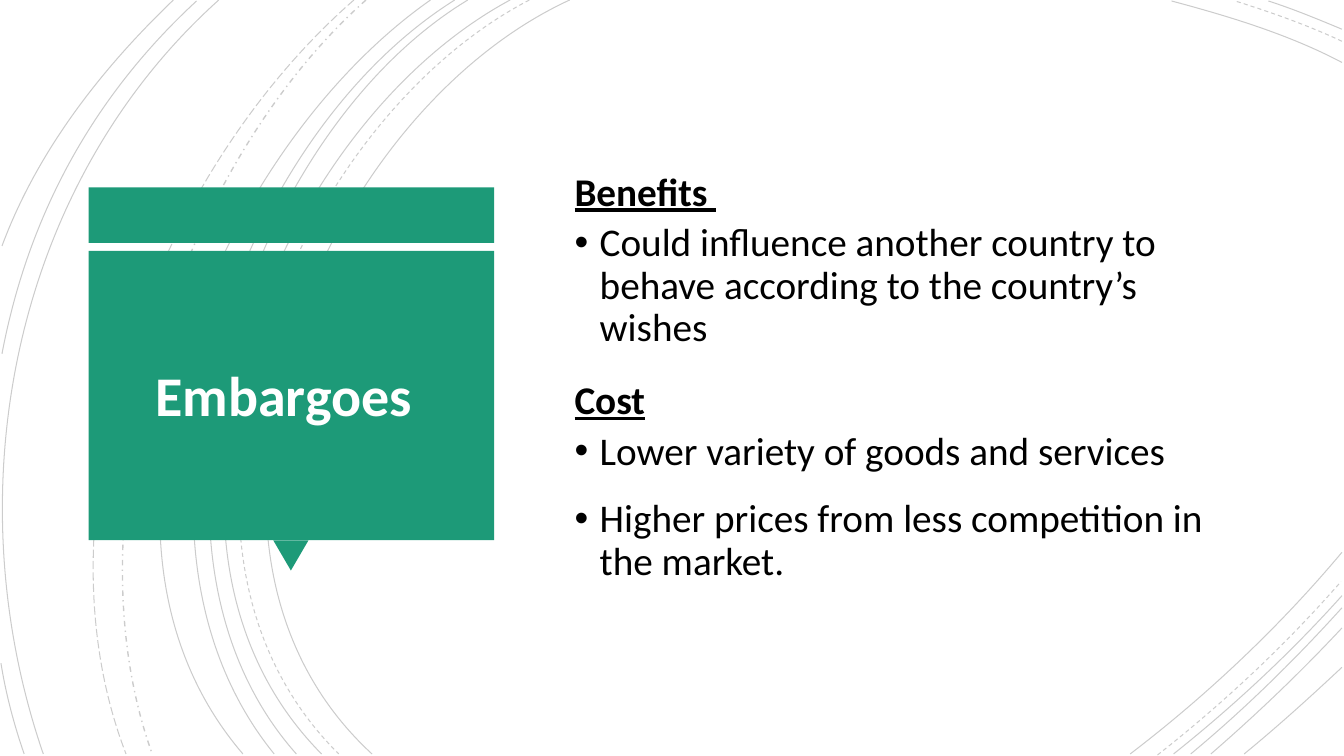
from lxml import etree
from pptx import Presentation
from pptx.dml.color import RGBColor
from pptx.enum.dml import MSO_LINE
from pptx.enum.shapes import MSO_SHAPE
from pptx.enum.text import MSO_ANCHOR, PP_ALIGN
from pptx.oxml.ns import qn
from pptx.util import Pt

PX = 9144  # 100 px to the inch
FONT = "Calibri"
BLACK = RGBColor(0, 0, 0)
WHITE = RGBColor(255, 255, 255)
GREEN = RGBColor(0x1D, 0x9A, 0x78)
RECT, WEDGE = MSO_SHAPE.RECTANGLE, MSO_SHAPE.ISOSCELES_TRIANGLE
SOLID, DASH = MSO_LINE.SOLID, MSO_LINE.DASH
DOTTED, LONG = MSO_LINE.DASH_DOT, MSO_LINE.LONG_DASH
MIDDLE = MSO_ANCHOR.MIDDLE
LEFT, CENTER = PP_ALIGN.LEFT, PP_ALIGN.CENTER

# Each arc: start, two control points, end
ARCS = {
    SOLID: [
        ((565, 0), (315, 115), (143, 540), (369, 748)),
        ((1331, 62), (1278, 34), (1218, 16), (1162, 1)),
        ((1121, 748), (1197, 690), (1269, 622), (1331, 548)),
        ((506, 0), (270, 127), (110, 537), (319, 748)),
        ((1331, 29), (1307, 19), (1283, 9), (1258, 1)),
        ((1164, 748), (1223, 701), (1280, 648), (1331, 591)),
        ((464, 0), (244, 133), (110, 541), (294, 748)),
        ((1181, 748), (1234, 704), (1284, 655), (1331, 603)),
        ((451, 0), (231, 138), (97, 533), (272, 748)),
        ((1201, 748), (1246, 709), (1290, 667), (1331, 623)),
        ((427, 0), (217, 147), (53, 529), (241, 748)),
        ((1234, 748), (1267, 721), (1299, 692), (1331, 662)),
        ((217, 0), (11, 185), (-46, 490), (43, 748)),
        ((195, 1), (92, 96), (28, 214), (2, 351)),
        ((1, 658), (6, 689), (14, 719), (24, 748)),
        ((172, 0), (100, 69), (37, 150), (2, 244)),
    ],
    DASH: [
        ((525, 0), (285, 125), (123, 537), (336, 748)),
        ((1331, 41), (1297, 25), (1260, 12), (1225, 1)),
        ((1148, 749), (1213, 698), (1275, 640), (1330, 577)),
    ],
    DOTTED: [((363, 0), (176, 166), (65, 509), (151, 748))],
    LONG: [((351, 0), (157, 169), (29, 499), (125, 748))],
}

POINTS = [
    ("Benefits ", True),
    ("Could influence another country to behave according to the "
     "country’s wishes", False),
    ("Cost", True),
    ("Lower variety of goods and services", False),
    ("Higher prices from less competition in the market.", False),
]


def add_arc(slide, pts, dash):
    form = slide.shapes.build_freeform(*pts[0], scale=PX)
    form.add_line_segments(pts[1:], close=False)
    arc = form.convert_to_shape()
    arc.shadow.inherit = False
    arc.fill.background()
    arc.line.color.rgb = BLACK
    arc.line.width = Pt(1 if dash == DOTTED else 0.75)
    arc.line.dash_style = dash
    tint = arc.line._ln.find(".//" + qn("a:srgbClr"))
    etree.SubElement(tint, qn("a:alpha"), val="20000")
    # Turn the three segments into one Bezier curve
    track = arc._element.find(".//" + qn("a:path"))
    curve = etree.SubElement(track, qn("a:cubicBezTo"))
    for seg in track.findall(qn("a:lnTo")):
        curve.append(seg[0])
        track.remove(seg)


def add_block(slide, kind, x, y, w, h, turn=0):
    block = slide.shapes.add_shape(kind, x * PX, y * PX, w * PX, h * PX)
    block.shadow.inherit = False
    block.fill.solid()
    block.fill.fore_color.rgb = GREEN
    block.line.fill.background()
    block.rotation = turn


def add_frame(slide, x, y, w, h):
    frame = slide.shapes.add_textbox(x * PX, y * PX, w * PX, h * PX).text_frame
    frame.word_wrap = True
    frame.vertical_anchor = MIDDLE
    return frame


def add_text(para, text, size=28, color=BLACK, bold=False, under=False,
             align=LEFT, before=0, after=0, bullet=False):
    para.alignment = align
    para.line_spacing = 0.9
    para.space_before, para.space_after = Pt(before), Pt(after)
    if bullet:
        props = para._p.get_or_add_pPr()
        props.set("marL", str(25 * PX))
        props.set("indent", str(-25 * PX))
        etree.SubElement(props, qn("a:buFont"), typeface="Arial")
        etree.SubElement(props, qn("a:buChar"), char="•")
    run = para.add_run()
    run.text = text
    font = run.font
    font.name, font.size, font.color.rgb = FONT, Pt(size), color
    font.bold, font.underline = bold, under


def add_swirl(slide):
    for dash, arcs in ARCS.items():
        for pts in arcs:
            add_arc(slide, pts, dash)


def add_title(slide, x, y, w, h):
    # Top strip, pointer and main panel
    add_block(slide, RECT, x, y, w, 55)
    add_block(slide, WEDGE, x + w // 2 - 18, y + h - 30, 35, 30, turn=180)
    add_block(slide, RECT, x, y + 63, w, h - 93)
    frame = add_frame(slide, x + 11, y + 78, w - 25, h - 118)
    add_text(frame.paragraphs[0], "Embargoes ", size=40, color=WHITE,
             bold=True, align=CENTER)


def add_body(slide, x, y, w, h):
    frame = add_frame(slide, x, y, w, h)
    for i, (text, head) in enumerate(POINTS):
        para = frame.add_paragraph() if i else frame.paragraphs[0]
        add_text(para, text, bold=head, under=head, bullet=not head,
                 before=10 if head else 6, after=0 if head else 12)


def main():
    deck = Presentation()
    deck.slide_width, deck.slide_height = 1333 * PX, 750 * PX
    slide = deck.slides.add_slide(deck.slide_layouts[6])
    add_swirl(slide)
    add_title(slide, 88, 186, 402, 380)
    add_body(slide, 560, 88, 687, 574)
    deck.save("out.pptx")


if __name__ == "__main__":
    main()
